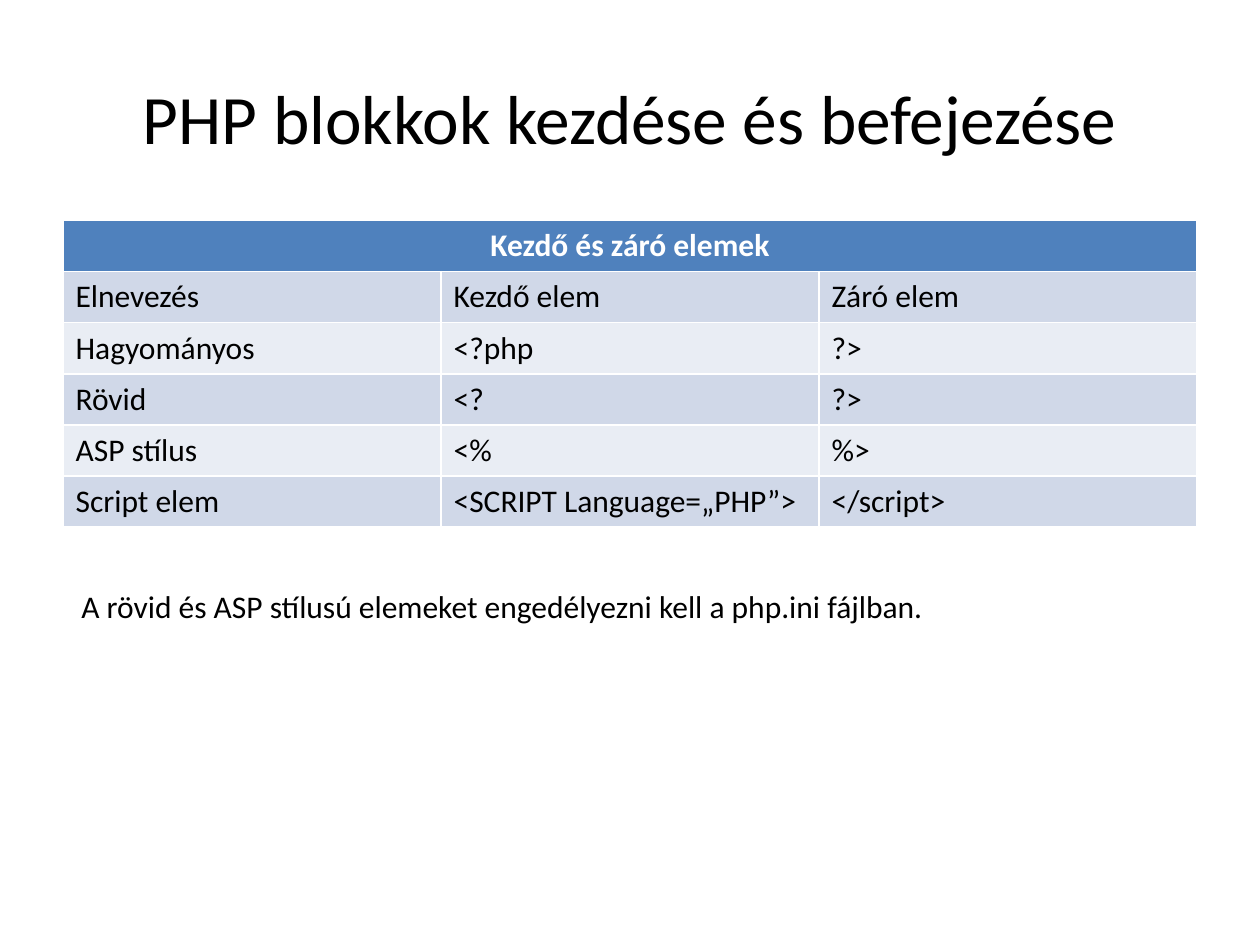
"""Build a slide listing the opening and closing tags of PHP blocks."""
import pptx
import pptx.dml.color
import pptx.enum.text
import pptx.util

Pt = pptx.util.Pt
ALIGN = pptx.enum.text.PP_ALIGN
ANCHOR = pptx.enum.text.MSO_ANCHOR


def rgb(value):
    return pptx.dml.color.RGBColor.from_string(value)


def write(tf, text, align, color="000000", **fmt):
    p = tf.paragraphs[0]
    p.alignment = align
    r = p.add_run()
    r.text = text
    for name, value in {"name": "Calibri", "size": Pt(18), "bold": False, **fmt}.items():
        setattr(r.font, name, value)
    r.font.color.rgb = rgb(color)


prs = pptx.Presentation()
prs.slide_width, prs.slide_height = Pt(720), Pt(540)
s = prs.slides.add_slide(prs.slide_layouts[5])

title = s.shapes.title
box = {"left": Pt(36), "top": Pt(21.6), "width": Pt(648), "height": Pt(90)}
for name, value in box.items():
    setattr(title, name, value)
title.text_frame.vertical_anchor = ANCHOR.MIDDLE
write(title.text_frame, "PHP blokkok kezdése és befejezése", ALIGN.CENTER, size=Pt(39.6))

rows = [
    ("Elnevezés", "Kezdő elem", "Záró elem"),
    ("Hagyományos", "<?php", "?>"),
    ("Rövid", "<?", "?>"),
    ("ASP stílus", "<%", "%>"),
    ("Script elem", "<SCRIPT Language=„PHP”>", "</script>"),
]
row_h = 29.2
n_rows = len(rows) + 1
table = s.shapes.add_table(n_rows, 3, Pt(36), Pt(126), Pt(648), Pt(row_h * n_rows)).table
for row in table.rows:
    row.height = Pt(row_h)

head = table.cell(0, 0)
head.merge(table.cell(0, 2))
head.fill.solid()
head.fill.fore_color.rgb = rgb("4F81BD")
write(head.text_frame, "Kezdő és záró elemek", ALIGN.CENTER, "FFFFFF", bold=True)

bands = ("E9EDF4", "D0D8E8")
for i, row in enumerate(rows, 1):
    for j, text in enumerate(row):
        cell = table.cell(i, j)
        cell.fill.solid()
        cell.fill.fore_color.rgb = rgb(bands[i % 2])
        write(cell.text_frame, text, ALIGN.LEFT)

note = s.shapes.add_textbox(Pt(39.4), Pt(332), Pt(630), Pt(29))
tf = note.text_frame
tf.word_wrap = True
tf.auto_size = pptx.enum.text.MSO_AUTO_SIZE.SHAPE_TO_FIT_TEXT
write(tf, "A rövid és ASP stílusú elemeket engedélyezni kell a php.ini fájlban.", ALIGN.LEFT)

prs.save("out.pptx")
